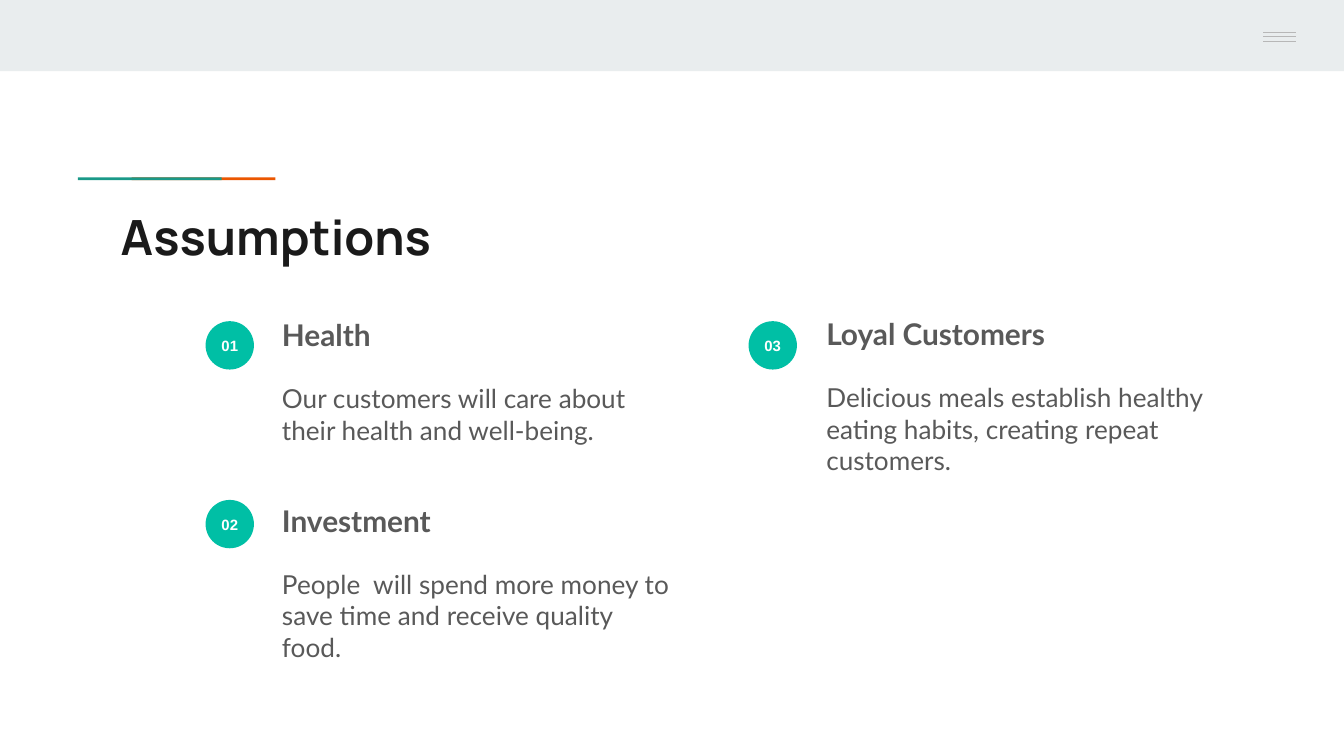
from lxml import etree
from pptx import Presentation
from pptx.dml.color import RGBColor
from pptx.enum.shapes import MSO_CONNECTOR, MSO_SHAPE
from pptx.enum.text import MSO_ANCHOR, PP_ALIGN
from pptx.oxml.ns import qn
from pptx.util import Inches, Pt

RECT, OVAL = MSO_SHAPE.RECTANGLE, MSO_SHAPE.OVAL
STRAIGHT = MSO_CONNECTOR.STRAIGHT
LEFT, CENTER = PP_ALIGN.LEFT, PP_ALIGN.CENTER
TOP, MIDDLE = MSO_ANCHOR.TOP, MSO_ANCHOR.MIDDLE

BAND, RULE, GRAY, INK = "E9EDEE", "B7B7B7", "595959", "1A1A1A"
TEAL, ORANGE, MINT, WHITE = "1A9988", "EB5600", "00BFA5", "FFFFFF"


def color(value):
    return RGBColor.from_string(value)


def add_block(s, kind, x, y, w, h, fill):
    sp = s.shapes.add_shape(kind, Inches(x), Inches(y), Inches(w), Inches(h))
    sp.shadow.inherit = False
    sp.fill.solid()
    sp.fill.fore_color.rgb = color(fill)
    sp.line.fill.background()


def add_text_box(s, x, y, w, h, anchor=TOP):
    tf = s.shapes.add_textbox(Inches(x), Inches(y), Inches(w), Inches(h)).text_frame
    tf.word_wrap = True
    tf.vertical_anchor = anchor
    tf.margin_left = tf.margin_right = tf.margin_top = tf.margin_bottom = Inches(0.1)
    return tf


def write(p, text, size, font="Lato", fill=GRAY, bold=False, align=LEFT, before=0, after=0):
    p.alignment = align
    p.space_before = Pt(before)
    p.space_after = Pt(after)
    r = p.add_run()
    r.text = text
    r.font.name = font
    r.font.size = Pt(size)
    r.font.bold = bold
    r.font.color.rgb = color(fill)


def add_header(s, x, y, w, h):
    add_block(s, RECT, x, y, w, h, BAND)
    # Menu icon
    left = Inches(x + w - 0.6)
    right = left + Inches(0.24)
    for dy in (0.24, 0.27, 0.31):
        top = Inches(y + dy)
        line = s.shapes.add_connector(STRAIGHT, left, top, right, top)
        line.line.color.rgb = color(RULE)
        line.line.width = Pt(0.75)
        etree.SubElement(line._element.spPr, qn("a:effectLst"))


def add_title(s, text, x, y, w, h):
    # Two-tone accent: the teal bar overlaps the orange one
    for dx, fill in ((0.18, ORANGE), (-0.22, TEAL)):
        add_block(s, RECT, x + dx, y - 0.12, 1.07, 0.02, fill)
    tf = add_text_box(s, x, y, w, h)
    write(tf.paragraphs[0], text, 26, font="Manrope", fill=INK, bold=True)


def add_badge(s, number, x, y, size):
    add_block(s, OVAL, x, y, size, size, MINT)
    pad = 0.11
    tf = add_text_box(s, x - pad, y - pad, size + 2 * pad, size + 2 * pad, MIDDLE)
    write(tf.paragraphs[0], number, 8, font="Arial", fill=WHITE, bold=True, align=CENTER)


def add_assumption(s, heading, body, x, y, w, h):
    tf = add_text_box(s, x, y, w, h)
    write(tf.paragraphs[0], heading, 16, bold=True)
    write(tf.add_paragraph(), body, 14, before=16, after=16)


def main():
    prs = Presentation()
    prs.slide_width = Inches(10)
    prs.slide_height = prs.slide_width * 9 // 16
    s = prs.slides.add_slide(prs.slide_layouts[6])

    add_header(s, 0, 0, 10, 0.53)
    add_title(s, "Assumptions", 0.8, 1.44, 8.41, 0.59)

    # Heading, body, badge corner, text corner
    assumptions = [
        ("Health", "Our customers will care about their health and well-being.",
         (1.53, 2.39), (2, 2.26)),
        ("Investment", "People  will spend more money to save time and receive quality food.",
         (1.53, 3.72), (2, 3.64)),
        ("Loyal Customers",
         "Delicious meals establish healthy eating habits, creating repeat customers.",
         (5.57, 2.39), (6.05, 2.25)),
    ]
    for i, (heading, body, badge, text) in enumerate(assumptions, 1):
        add_badge(s, f"{i:02}", *badge, 0.36)
        add_assumption(s, heading, body, *text, 3.1, 1.15)

    prs.save("out.pptx")


if __name__ == "__main__":
    main()
